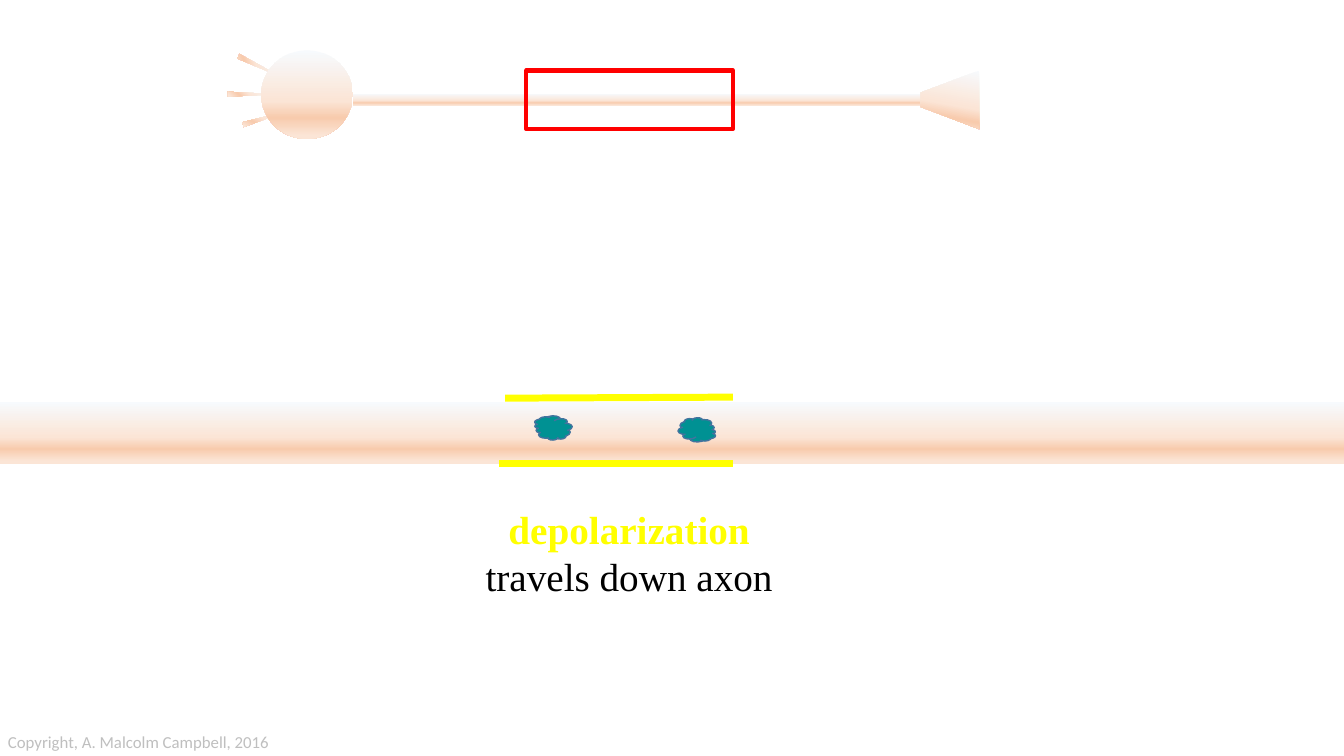
from lxml import etree
from pptx import Presentation
from pptx import util as u
from pptx.dml.color import RGBColor
from pptx.enum import shapes, text
from pptx.oxml import ns

PALE, PEACH, SALMON = RGBColor(0xF7, 0xFA, 0xFD), RGBColor(0xFB, 0xE5, 0xD6), RGBColor(0xF8, 0xCB, 0xAD)
TEAL, CLOUD_EDGE = RGBColor(0x00, 0x91, 0x93), RGBColor(0x43, 0x73, 0x9E)
RED, YELLOW = RGBColor(0xFF, 0x00, 0x00), RGBColor(0xFF, 0xFF, 0x00)
BLACK, GRAY = RGBColor(0x00, 0x00, 0x00), RGBColor(0xBF, 0xBF, 0xBF)
MEMBRANE = [(0, PALE), (57, PEACH), (76, SALMON), (96, PEACH)]
KIND = shapes.MSO_SHAPE


def add_xml(parent, tag, **attributes):
    return etree.SubElement(parent, ns.qn(tag), attributes)


class NeuronSlide:
    """Draws the parts of a neuron diagram on one slide."""

    def __init__(self, deck):
        self.page = deck.slides.add_slide(deck.slide_layouts[6])

    def shape(self, kind, box, turn=0, fill=None, line=None, width=1):
        shape = self.page.shapes.add_shape(kind, *map(u.Inches, box))
        shape.shadow.inherit = False
        shape.rotation = turn
        if fill is None:
            shape.fill.background()
        else:
            shape.fill.solid()
            shape.fill.fore_color.rgb = fill
        if line is None:
            shape.line.fill.background()
        else:
            shape.line.color.rgb = line
            shape.line.width = u.Pt(width)
        return shape

    def membrane(self, kind, box, turn=0, angle=90):
        shape = self.shape(kind, box, turn)
        shape.fill.gradient()
        shape.fill.gradient_angle = 360 - angle
        stops = shape._element.spPr.find(".//" + ns.qn("a:gsLst"))
        for stop in list(stops):
            stops.remove(stop)
        for percent, color in MEMBRANE:
            stop = add_xml(stops, "a:gs", pos=str(percent * 1000))
            add_xml(stop, "a:srgbClr", val=str(color))
        return shape

    def line(self, start, end, color, width):
        points = map(u.Inches, (*start, *end))
        line = self.page.shapes.add_connector(shapes.MSO_CONNECTOR.STRAIGHT, *points)
        line.line.color.rgb = color
        line.line.width = u.Pt(width)
        add_xml(line._element.spPr, "a:effectLst")

    def text(self, box, lines, font, size, wrap=True, align=text.PP_ALIGN.LEFT):
        label = self.page.shapes.add_textbox(*map(u.Inches, box))
        frame = label.text_frame
        frame.word_wrap = wrap
        frame.auto_size = text.MSO_AUTO_SIZE.SHAPE_TO_FIT_TEXT
        frame.text = "\n".join(words for words, _, _ in lines)
        for para, (_, color, bold) in zip(frame.paragraphs, lines):
            para.alignment = align
            span = para.runs[0]
            span.font.name = font
            span.font.size = u.Pt(size)
            span.font.bold = bold
            span.font.color.rgb = color
        return label

    def outline(self, span, color, width):
        edge = etree.Element(ns.qn("a:ln"), w=str(u.Pt(width)))
        add_xml(add_xml(edge, "a:solidFill"), "a:srgbClr", val=str(color))
        span.font._element.insert(0, edge)


def main():
    deck = Presentation()
    deck.slide_width, deck.slide_height = u.Inches(13.33), u.Inches(7.5)
    slide = NeuronSlide(deck)

    slide.membrane(KIND.RECTANGLE, (0, 3.99, 13.33, 0.61))
    for left, top, turn in [(2.56, 0.42, 116), (2.48, 0.69, 90), (2.62, 0.92, 73)]:
        slide.membrane(KIND.ISOSCELES_TRIANGLE, (left, top, 0.05, 0.49), turn, 45)
    slide.membrane(KIND.OVAL, (2.59, 0.5, 0.91, 0.88))
    slide.membrane(KIND.RECTANGLE, (3.5, 0.93, 5.64, 0.12))
    terminal = slide.membrane(KIND.TRAPEZOID, (9.13, 0.7, 0.58, 0.58), 270, 190)
    terminal.adjustments[0] = 0.377
    slide.shape(KIND.RECTANGLE, (5.22, 0.7, 2.05, 0.58), line=RED, width=3)

    for left, top, turn in [(5.37, 4.06, 266.9), (6.79, 4.08, 87.4)]:
        slide.shape(KIND.CLOUD, (left, top, 0.24, 0.37), turn, TEAL, CLOUD_EDGE)
    slide.line((7.27, 4.6), (4.95, 4.6), YELLOW, 5)
    slide.line((7.27, 3.94), (5.01, 3.95), YELLOW, 5)

    caption = slide.text(
        (3.71, 4.96, 5.06, 1.04),
        [("depolarization", YELLOW, True), ("travels down axon", BLACK, False)],
        "Times New Roman", 28, align=text.PP_ALIGN.CENTER)
    slide.outline(caption.text_frame.paragraphs[0].runs[0], BLACK, 0.75)
    slide.text((-0.02, 7.21, 2.82, 0.3),
               [("Copyright, A. Malcolm Campbell, 2016", GRAY, False)],
               "Calibri", 12, wrap=False)
    deck.save("out.pptx")


if __name__ == "__main__":
    main()
